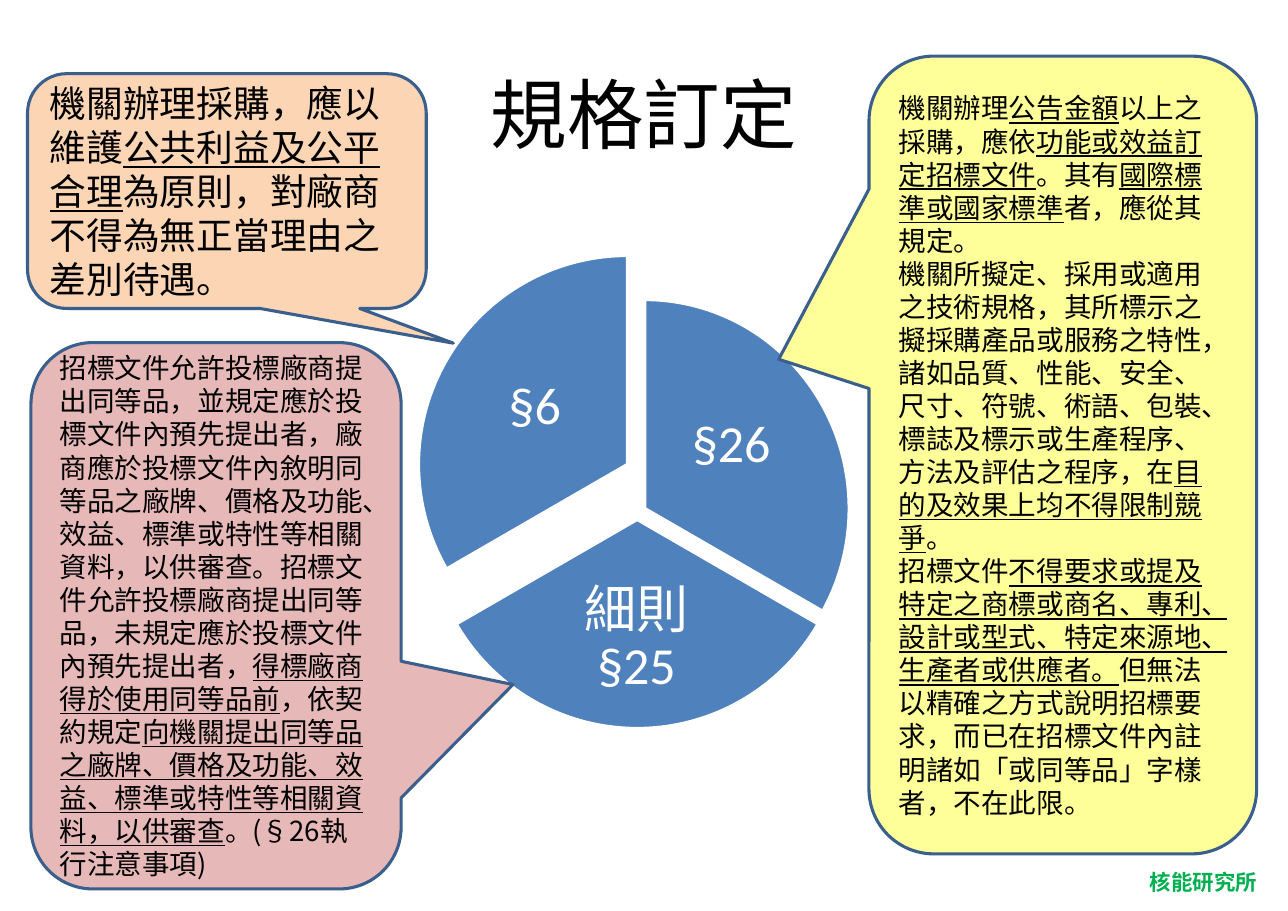
from pptx import Presentation
from pptx.dml.color import RGBColor
from pptx.enum.shapes import MSO_SHAPE
from pptx.enum.text import MSO_ANCHOR, PP_ALIGN
from pptx.oxml.ns import qn
from pptx.util import Pt

COLORS = {
    "black": "000000", "white": "FFFFFF", "green": "00B050", "blue": "4F81BD",
    "outline": "3A5F8C", "peach": "FCD5B5", "pink": "E6B9B8", "yellow": "FFFF99",
}
CJK = "Noto Sans CJK SC"
LATIN = "Calibri"

WEDGES = [
    ((288, 195.8, 267, 273), 270, 30, "§26", (144.7, 50.4, 90.7, 90.7)),
    ((280, 203, 273, 273), 30, 150, "細則§25", (74.2, 172.8, 123.8, 84.2)),
    ((273.6, 167, 273, 273), 150, 270, "§6", (29.5, 54, 92.9, 90.7)),
]

PRINCIPLE = [
    ["機關辦理採購，應以維護", "公共利益及公平合理",
     "為原則，對廠商不得為無正當理由之差別待遇。"],
]
EQUIVALENTS = [
    ["招標文件允許投標廠商提出同等品，並規定應於投標文件內預先提出者，"
     "廠商應於投標文件內敘明同等品之廠牌、價格及功能、效益、標準或特性等相關資料，"
     "以供審查。招標文件允許投標廠商提出同等品，未規定應於投標文件內預先提出者，",
     "得標廠商得於使用同等品前", "，依契約規定",
     "向機關提出同等品之廠牌、價格及功能、效益、標準或特性等相關資料，以供審查",
     "。(§26執行注意事項)"],
]
SPECIFICATIONS = [
    ["機關辦理", "公告金額", "以上之採購，應依", "功能或效益訂定招標文件",
     "。其有", "國際標準或國家標準", "者，應從其規定。"],
    ["機關所擬定、採用或適用之技術規格，其所標示之擬採購產品或服務之特性，"
     "諸如品質、性能、安全、尺寸、符號、術語、包裝、標誌及標示或生產程序、"
     "方法及評估之程序，在", "目的及效果上均不得限制競爭", "。"],
    ["招標文件",
     "不得要求或提及特定之商標或商名、專利、設計或型式、特定來源地、生產者或供應者。",
     "但無法以精確之方式說明招標要求，而已在招標文件內註明諸如「或同等品」字樣者，"
     "不在此限。"],
]

CALLOUTS = [
    ((18, 48.2, 260.6, 153.4), (0.568, 0.648), "peach", 24, PRINCIPLE),
    ((20.2, 223.9, 242, 357), (0.802, 0.126), "pink", 18, EQUIVALENTS),
    ((568, 36.7, 253.4, 521.3), (-0.733, -0.12), "yellow", 18, SPECIFICATIONS),
]


def rgb(name):
    """Return the named palette colour."""
    return RGBColor.from_string(COLORS[name])


def style_run(r, size, color, latin=CJK):
    """Set the size, colour and both typefaces of a run."""
    r.font.size = Pt(size)
    r.font.color.rgb = rgb(color)
    r.font.name = latin
    ea = r.font._element.makeelement(qn("a:ea"), {"typeface": CJK})
    r.font._element.find(qn("a:latin")).addnext(ea)


def add_preset(s, kind, box, adjustments, fill, line):
    """Add a flat preset shape with a two-point outline."""
    sp = s.shapes.add_shape(kind, *map(Pt, box))
    for i, value in enumerate(adjustments):
        sp.adjustments[i] = value
    sp.shadow.inherit = False
    sp.fill.solid()
    sp.fill.fore_color.rgb = rgb(fill)
    sp.line.color.rgb = rgb(line)
    sp.line.width = Pt(2)
    return sp


def add_label(s, box, text, size, color, latin=CJK, inset=(7.2, 3.6), wrap=True):
    """Add a one-paragraph text box and return its paragraph."""
    tf = s.shapes.add_textbox(*map(Pt, box)).text_frame
    tf.word_wrap = wrap
    tf.margin_left = tf.margin_right = Pt(inset[0])
    tf.margin_top = tf.margin_bottom = Pt(inset[1])
    tf.text = text
    p = tf.paragraphs[0]
    style_run(p.runs[0], size, color, latin)
    return p


def add_title(s, box):
    """Add the centred slide title."""
    p = add_label(s, box, "規格訂定", 50, "black", inset=(7.92, 4.3))
    p.alignment = PP_ALIGN.CENTER
    p._parent.vertical_anchor = MSO_ANCHOR.MIDDLE


def add_footer(s, box):
    """Add the institute name in the lower corner."""
    p = add_label(s, box, "核能研究所", 14, "green", wrap=False)
    p.runs[0].font.bold = True


def add_wedge(s, box, start, end, text, label):
    """Add a pie wedge and its label, offset from the wedge's box."""
    angles = [degrees * 0.6 for degrees in (start, end)]
    add_preset(s, MSO_SHAPE.PIE, box, angles, "blue", "white")
    x, y, w, h = label
    p = add_label(s, (box[0] + x, box[1] + y, w, h), text, 34, "white",
                  LATIN, inset=(3.6, 3.6))
    p.alignment = PP_ALIGN.CENTER
    p.line_spacing = 0.9
    p._parent.vertical_anchor = MSO_ANCHOR.MIDDLE


def add_callout(s, box, tail, fill, size, paragraphs):
    """Add a callout whose every second run is underlined."""
    sp = add_preset(s, MSO_SHAPE.ROUNDED_RECTANGULAR_CALLOUT, box,
                    (*tail, 0.167), fill, "outline")
    tf = sp.text_frame
    tf.word_wrap = True
    tf.vertical_anchor = MSO_ANCHOR.MIDDLE
    for i, parts in enumerate(paragraphs):
        p = tf.add_paragraph() if i else tf.paragraphs[0]
        p.alignment = PP_ALIGN.LEFT
        for j, text in enumerate(parts):
            r = p.add_run()
            r.text = text
            style_run(r, size, "black")
            r.font.underline = j % 2 == 1


def main():
    """Build the slide and save it."""
    prs = Presentation()
    prs.slide_width, prs.slide_height = Pt(841.9), Pt(595.3)
    s = prs.slides.add_slide(prs.slide_layouts[6])
    add_footer(s, (744.5, 564.5, 85, 24.5))
    add_title(s, (41.8, 23.8, 758.2, 99.4))
    for wedge in WEDGES:
        add_wedge(s, *wedge)
    for callout in CALLOUTS:
        add_callout(s, *callout)
    prs.save("out.pptx")


if __name__ == "__main__":
    main()
